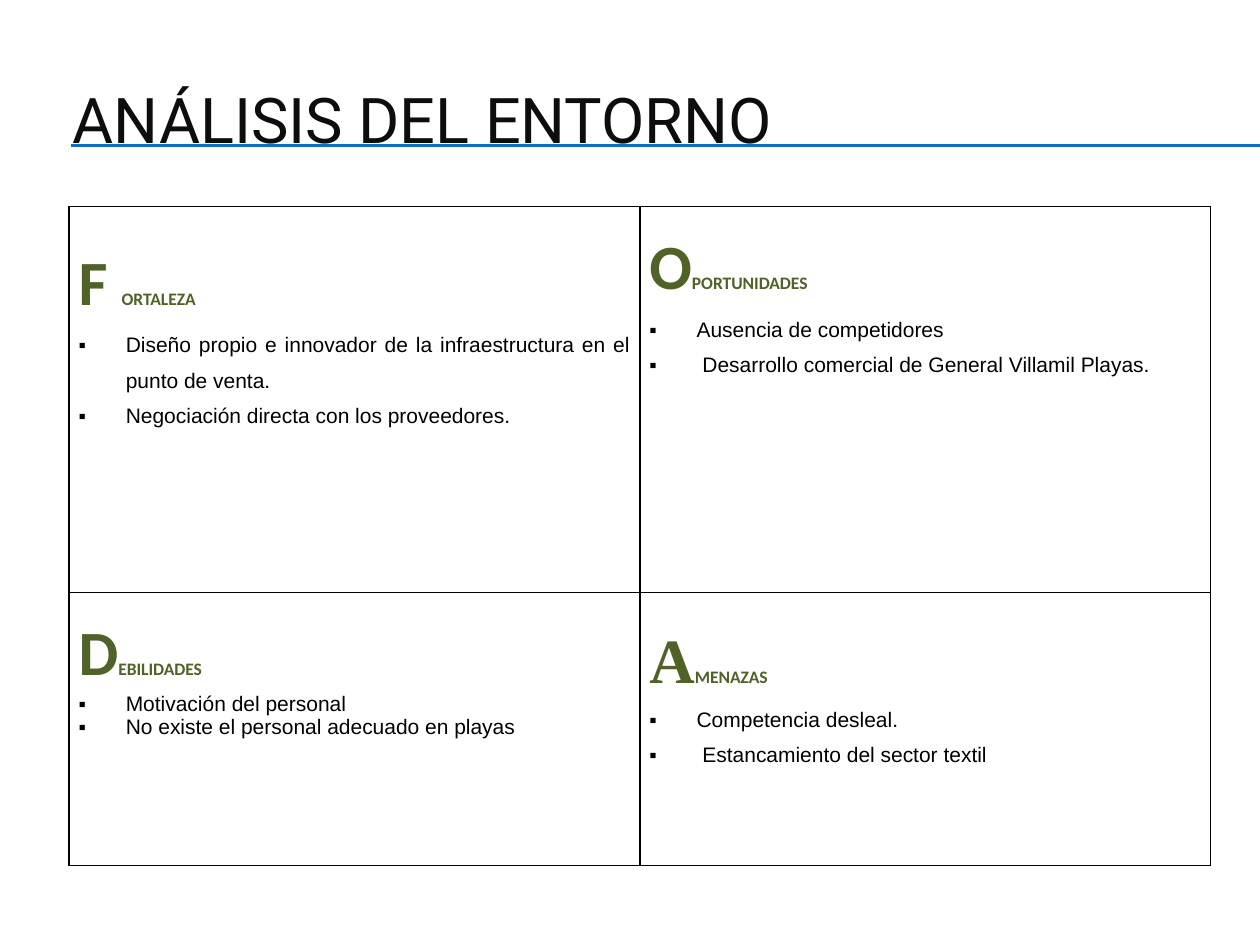
import pptx
import pptx.util
import pptx.dml.color
import pptx.enum.shapes
import pptx.enum.text
import pptx.oxml
import pptx.oxml.ns

Pt = pptx.util.Pt
ALIGN = pptx.enum.text.PP_ALIGN
NS = pptx.oxml.ns.nsdecls("a")

BLACK, GREEN, BLUE, INK = "000000", "4F6228", "0F6FC6", "0D0D0D"
BODY = {"size": Pt(12), "name": "Arial", "bold": False, "color": BLACK}
HEAD = {"size": Pt(10), "name": "Calibri", "bold": True, "color": GREEN}
INITIAL = HEAD | {"size": Pt(36)}
LOOSE = {"alignment": ALIGN.JUSTIFY, "line_spacing": 1.5}
LEFT = {"alignment": ALIGN.LEFT}

# Each quarter: initial, rest of heading, initial's font, top margin,
# heading format, list format, items
SWOT = [
    [("F ", "ORTALEZA", "Calibri", 0, LOOSE, LOOSE,
      ["Diseño propio e innovador de la infraestructura en el punto de venta.",
       "Negociación directa con los proveedores."]),
     ("O", "PORTUNIDADES", "Calibri", 13, LEFT, LOOSE,
      ["Ausencia de competidores",
       " Desarrollo comercial de General Villamil Playas."])],
    [("D", "EBILIDADES", "Calibri", 13, LEFT, LEFT,
      ["Motivación del personal",
       "No existe el personal adecuado en playas"]),
     ("A", "MENAZAS", "Times New Roman", 0, LOOSE, LOOSE,
      ["Competencia desleal.",
       " Estancamiento del sector textil"])],
]


def rgb(code):
    return pptx.dml.color.RGBColor.from_string(code)


def apply(target, style):
    for key, value in style.items():
        setattr(target, key, value)


def add_run(para, text, style):
    run = para.add_run()
    run.text = text
    apply(run.font, {k: v for k, v in style.items() if k != "color"})
    run.font.color.rgb = rgb(style["color"])


def add_bullet(para):
    props = para._p.get_or_add_pPr()
    props.set("marL", str(Pt(27)))
    props.set("indent", str(Pt(-27)))
    for xml in ('<a:buFont %s typeface="Arial"/>', '<a:buChar %s char="▪"/>'):
        props.append(pptx.oxml.parse_xml(xml % NS))


def add_borders(cell):
    props = cell._tc.get_or_add_tcPr()
    for spot, side in enumerate("LRTB"):
        props.insert(spot, pptx.oxml.parse_xml(
            f'<a:ln{side} {NS} w="{Pt(1)}"><a:solidFill>'
            f'<a:srgbClr val="{BLACK}"/></a:solidFill></a:ln{side}>'))


def add_rules(slide, left, top, width, gap):
    """Draw the double line under the title."""
    for y in (top, top + gap):
        rule = slide.shapes.add_connector(
            pptx.enum.shapes.MSO_CONNECTOR.STRAIGHT,
            Pt(left), Pt(y), Pt(left + width), Pt(y))
        rule.line.color.rgb = rgb(BLUE)
        rule.line.width = Pt(0.75)
        rule._element.spPr.append(pptx.oxml.parse_xml(f"<a:effectLst {NS}/>"))


def add_title(slide, left, top, width, height):
    box = slide.shapes.add_textbox(Pt(left), Pt(top), Pt(width), Pt(height))
    frame = box.text_frame
    apply(frame, {"word_wrap": True,
                  "vertical_anchor": pptx.enum.text.MSO_ANCHOR.MIDDLE})
    para = frame.paragraphs[0]
    para.alignment = ALIGN.CENTER
    add_run(para, "ANÁLISIS DEL ENTORNO",
            {"size": Pt(36), "name": "Roboto", "color": INK})


def fill_cell(cell, initial, rest, font, top, head, body, items):
    apply(cell, {"margin_left": Pt(5.4), "margin_right": Pt(5.4),
                 "margin_top": Pt(top), "margin_bottom": Pt(0)})
    cell.fill.background()
    add_borders(cell)
    frame = cell.text_frame
    para = frame.paragraphs[0]
    apply(para, head)
    add_run(para, initial, INITIAL | {"name": font})
    add_run(para, rest, HEAD)
    for item in items:
        para = frame.add_paragraph()
        apply(para, body)
        add_bullet(para)
        add_run(para, item, BODY)


def add_swot(slide, left, top, width, heights):
    table = slide.shapes.add_table(
        2, 2, Pt(left), Pt(top), Pt(width), Pt(sum(heights))).table
    apply(table, {"first_row": False, "horz_banding": False})
    for column in table.columns:
        column.width = Pt(width / 2)
    for r, height in enumerate(heights):
        table.rows[r].height = Pt(height)
        for c, quarter in enumerate(SWOT[r]):
            fill_cell(table.cell(r, c), *quarter)


def main():
    deck = pptx.Presentation()
    apply(deck, {"slide_width": Pt(720), "slide_height": Pt(540)})
    slide = deck.slides.add_slide(deck.slide_layouts[6])
    add_rules(slide, 40.5, 82.8, 679.5, 0.6)
    add_title(slide, -101.5, 39.6, 686, 56)
    add_swot(slide, 39.5, 118, 652.4, (220.5, 156))
    deck.save("out.pptx")


if __name__ == "__main__":
    main()
